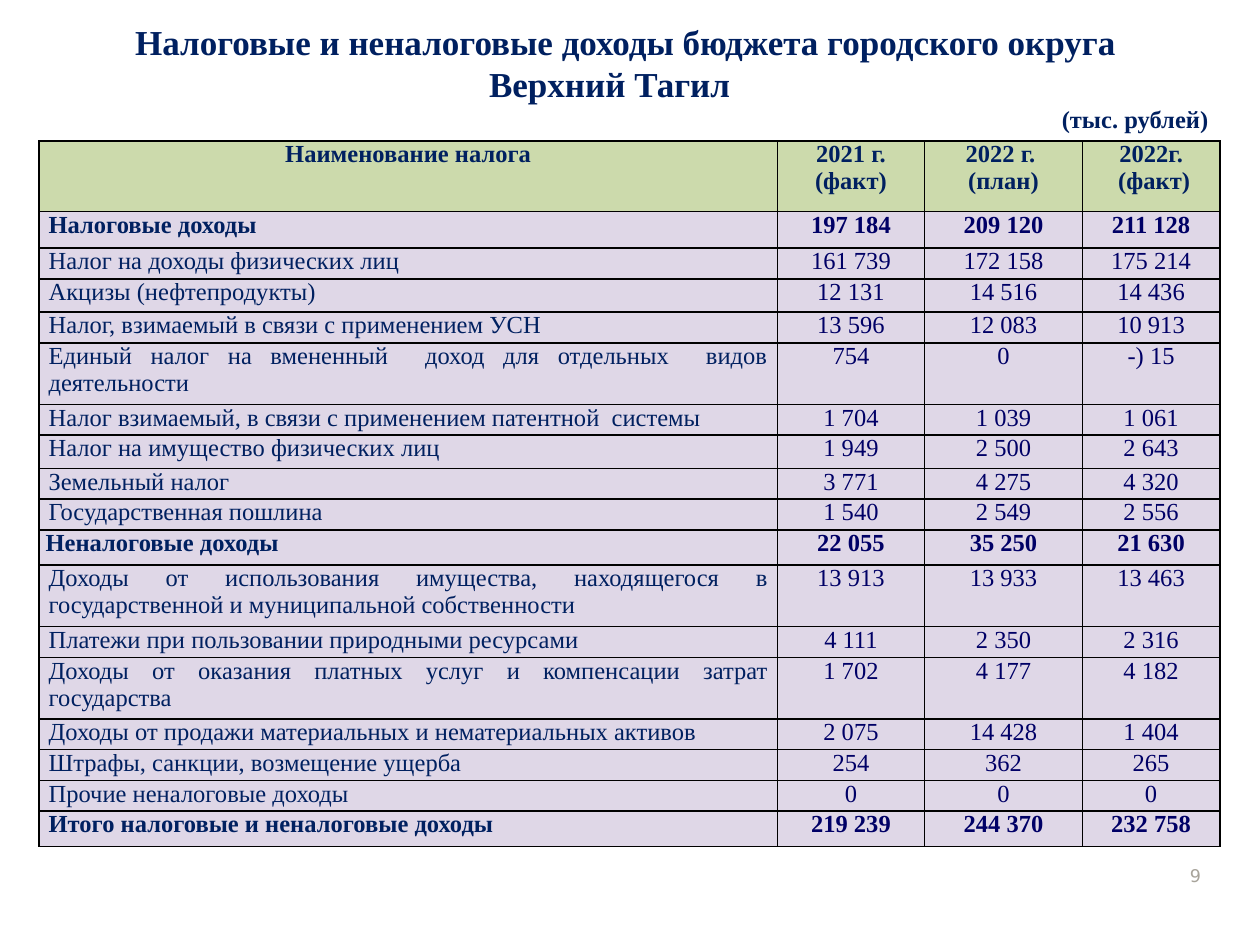
from dataclasses import dataclass

import pptx
import pptx.dml.color
import pptx.enum.text
import pptx.oxml
import pptx.oxml.ns
import pptx.util
from pptx.util import Cm

Align = pptx.enum.text.PP_ALIGN
Anchor = pptx.enum.text.MSO_ANCHOR


@dataclass(frozen=True)
class Theme:
    serif: str = "Times New Roman"
    sans: str = "DejaVu Sans"
    navy: str = "002060"
    blue: str = "000066"
    gray: str = "A8A49B"
    green: str = "CCDAAC"
    lilac: str = "DFD7E7"
    black: str = "000000"
    title: float = 20
    body: float = 14
    small: float = 10
    rule: float = 1


@dataclass(frozen=True)
class Row:
    name: str
    sums: tuple[str, str, str]
    high: float = 0.62
    bold: bool = False
    align: Align = Align.JUSTIFY
    inset: float = 0.19


THEME = Theme()
PAD = 0.13
TALL = 1.24
HEAD_HIGH = 1.42
COLS = (14.88, 2.97, 3.18, 2.77)
HEADS = (
    ("Наименование налога",),
    ("2021 г.", "(факт)"),
    ("2022 г. ", "(план)"),
    ("2022г.", " (факт)"),
)
ROWS = (
    Row("Налоговые доходы", ("197 184", "209 120", "211 128"), 0.74, True),
    Row("Налог на доходы физических лиц", ("161 739", "172 158", "175 214")),
    Row("Акцизы (нефтепродукты)", ("12 131", "14 516", "14 436"), 0.67),
    Row("Налог, взимаемый в связи с применением УСН",
        ("13 596", "12 083", "10 913")),
    Row("Единый налог на вмененный  доход для отдельных  видов деятельности",
        ("754", "0", "-) 15"), TALL),
    Row("Налог взимаемый, в связи с применением патентной  системы",
        ("1 704", "1 039", "1 061")),
    Row("Налог на имущество физических лиц", ("1 949", "2 500", "2 643"), 0.67),
    Row("Земельный налог", ("3 771", "4 275", "4 320")),
    Row("Государственная пошлина", ("1 540", "2 549", "2 556")),
    Row("Неналоговые доходы", ("22 055", "35 250", "21 630"), 0.71, True,
        Align.LEFT, PAD),
    Row("Доходы от использования имущества, находящегося в "
        "государственной и муниципальной собственности",
        ("13 913", "13 933", "13 463"), TALL),
    Row("Платежи при пользовании природными ресурсами",
        ("4 111", "2 350", "2 316")),
    Row("Доходы от оказания платных услуг и компенсации затрат государства",
        ("1 702", "4 177", "4 182"), TALL),
    Row("Доходы от продажи материальных и нематериальных активов",
        ("2 075", "14 428", "1 404")),
    Row("Штрафы, санкции, возмещение ущерба", ("254", "362", "265")),
    Row("Прочие неналоговые доходы", ("0", "0", "0")),
    Row("Итого налоговые и неналоговые доходы",
        ("219 239", "244 370", "232 758"), 0.71, True),
)


def rgb(code: str) -> pptx.dml.color.RGBColor:
    return pptx.dml.color.RGBColor.from_string(code)


def write(par, text: str, size: float, color: str = THEME.navy,
          bold: bool = False, align: Align = Align.CENTER,
          face: str = THEME.serif) -> None:
    par.alignment = align
    run = par.add_run()
    run.text = text
    run.font.name = face
    run.font.size = pptx.util.Pt(size)
    run.font.bold = bold
    run.font.color.rgb = rgb(color)


def add_box(slide, left: float, top: float, wide: float, high: float):
    frame = slide.shapes.add_textbox(
        Cm(left), Cm(top), Cm(wide), Cm(high)).text_frame
    frame.word_wrap = True
    return frame


def add_edges(cell) -> None:
    width = pptx.util.Pt(THEME.rule)
    for side in ("lnL", "lnR", "lnT", "lnB"):
        cell._tc.get_or_add_tcPr().append(pptx.oxml.parse_xml(
            f'<a:{side} {pptx.oxml.ns.nsdecls("a")} w="{width}">'
            f'<a:solidFill><a:srgbClr val="{THEME.black}"/></a:solidFill>'
            f'</a:{side}>'))


def fill_cell(cell, lines: tuple[str, ...], back: str, color: str, bold: bool,
              align: Align = Align.CENTER, inset: float = PAD) -> None:
    add_edges(cell)
    cell.fill.solid()
    cell.fill.fore_color.rgb = rgb(back)
    cell.margin_left = cell.margin_right = Cm(inset)
    cell.margin_top = cell.margin_bottom = Cm(0)
    frame = cell.text_frame
    for num, line in enumerate(lines):
        par = frame.add_paragraph() if num else frame.paragraphs[0]
        write(par, line, THEME.body, color, bold, align)


def add_title(slide) -> None:
    frame = add_box(slide, 0.79, 0.28, 23.82, 2.57)
    write(frame.paragraphs[0],
          "Налоговые и неналоговые доходы бюджета городского округа ",
          THEME.title, bold=True)
    town = frame.add_paragraph()
    town._p.get_or_add_pPr().set("marL", str(Cm(8.82)))
    write(town, "Верхний Тагил", THEME.title, bold=True, align=Align.LEFT)
    write(frame.add_paragraph(), "(тыс. рублей)", THEME.body, bold=True,
          align=Align.RIGHT)


def add_grid(slide) -> None:
    highs = (HEAD_HIGH, *(row.high for row in ROWS))
    grid = slide.shapes.add_table(
        len(highs), len(COLS), Cm(0.79), Cm(2.84),
        Cm(sum(COLS)), Cm(sum(highs))).table
    grid.first_row = grid.horz_banding = False
    for col, wide in zip(grid.columns, COLS):
        col.width = Cm(wide)
    for line, high in zip(grid.rows, highs):
        line.height = Cm(high)
    for num, lines in enumerate(HEADS):
        fill_cell(grid.cell(0, num), lines, THEME.green, THEME.navy, True)
    for num, row in enumerate(ROWS, 1):
        fill_cell(grid.cell(num, 0), (row.name,), THEME.lilac, THEME.navy,
                  row.bold, row.align, row.inset)
        for col, text in enumerate(row.sums, 1):
            fill_cell(grid.cell(num, col), (text,), THEME.lilac, THEME.blue,
                      row.bold)


def add_number(slide) -> None:
    frame = add_box(slide, 23.19, 16.97, 1.27, 1.02)
    frame.vertical_anchor = Anchor.BOTTOM
    write(frame.paragraphs[0], "9", THEME.small, THEME.gray,
          align=Align.RIGHT, face=THEME.sans)


def main() -> None:
    deck = pptx.Presentation()
    deck.slide_width, deck.slide_height = Cm(25.4), Cm(19.05)
    slide = deck.slides.add_slide(deck.slide_layouts[6])
    add_number(slide)
    add_title(slide)
    add_grid(slide)
    deck.save("out.pptx")


if __name__ == "__main__":
    main()
